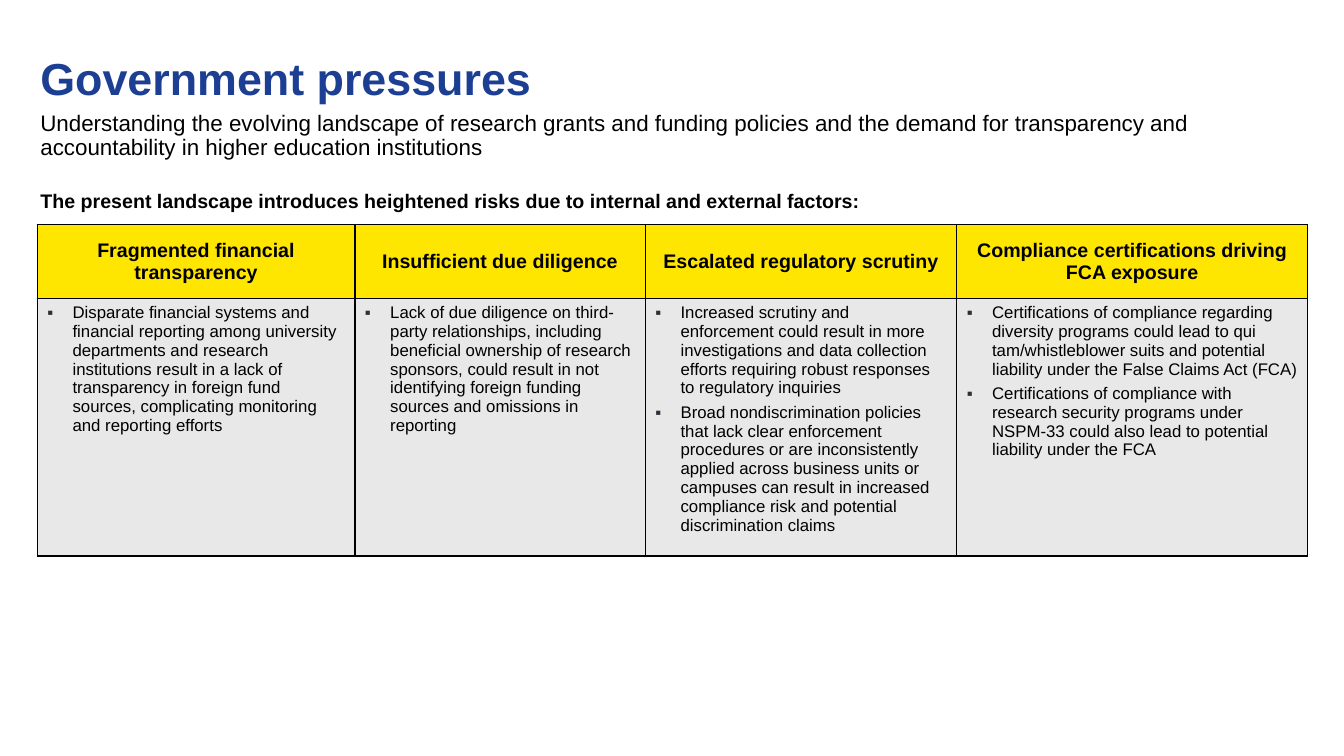
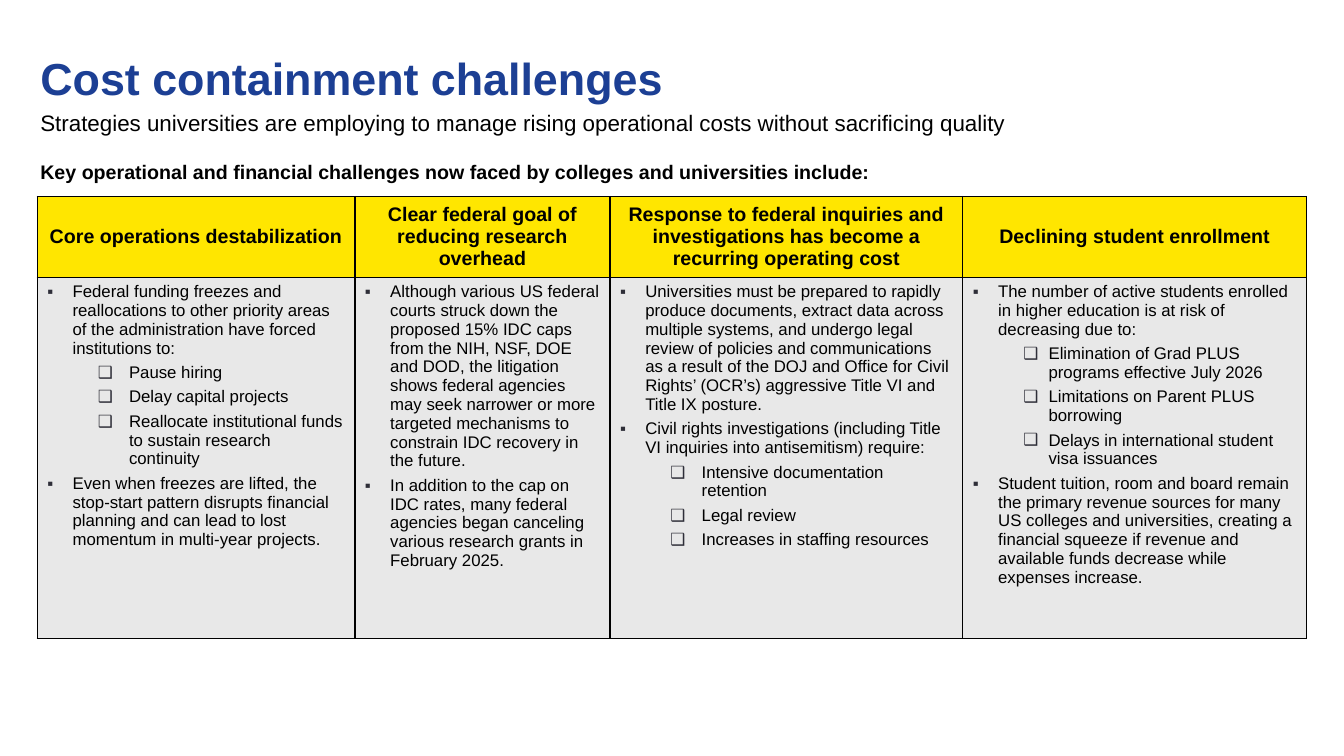
import dataclasses

import lxml.etree
import pptx
import pptx.dml.color
import pptx.enum.text
import pptx.oxml.ns
import pptx.util

Inches = pptx.util.Inches
Pt = pptx.util.Pt
RGBColor = pptx.dml.color.RGBColor
qn = pptx.oxml.ns.qn

NAVY = RGBColor(0x1C, 0x3F, 0x94)
BLACK = RGBColor(0x00, 0x00, 0x00)
YELLOW = RGBColor(0xFF, 0xE6, 0x00)
GREY = RGBColor(0xE8, 0xE8, 0xE8)
BULLET = RGBColor(0x2E, 0x2E, 0x38)
FONT = "Arial"

MARGIN = 0.4
TEXT_WIDTH = 12.21
TABLE_LEFT = 0.37
LEAD_TO_TABLE = 0.36
HANG = 0.25
SUB_OFFSET = 0.5


@dataclasses.dataclass
class Column:
    """A table column; a list among the points holds sub-points."""
    heading: str
    width: float
    points: list
    sub_hang: float = HANG


def set_font(paragraph, size, color=BLACK, bold=False):
    font = paragraph.font
    font.name = FONT
    font.size = Pt(size)
    font.bold = bold
    font.color.rgb = color


def add_line(slide, text, top, height, size, color=BLACK, bold=False,
             inset=0.05, spacing=None):
    box = slide.shapes.add_textbox(Inches(MARGIN), Inches(top),
                                   Inches(TEXT_WIDTH), Inches(height))
    frame = box.text_frame
    frame.word_wrap = True
    frame.margin_left = frame.margin_right = 0
    frame.margin_top = frame.margin_bottom = Inches(inset)
    paragraph = frame.paragraphs[0]
    paragraph.text = text
    paragraph.line_spacing = spacing
    set_font(paragraph, size, color, bold)


def style_cell(cell, fill):
    """Give the cell a thin black border and a solid fill."""
    properties = cell._tc.get_or_add_tcPr()
    for side in ("a:lnL", "a:lnR", "a:lnT", "a:lnB"):
        line = lxml.etree.SubElement(properties, qn(side), w=str(Pt(1)))
        solid = lxml.etree.SubElement(line, qn("a:solidFill"))
        lxml.etree.SubElement(solid, qn("a:srgbClr"), val=str(BLACK))
    cell.fill.solid()
    cell.fill.fore_color.rgb = fill


def set_bullet(paragraph, mark, indent, hang):
    properties = paragraph._p.get_or_add_pPr()
    properties.set("marL", str(Inches(indent)))
    properties.set("indent", str(-Inches(hang)))
    color = lxml.etree.SubElement(properties, qn("a:buClr"))
    lxml.etree.SubElement(color, qn("a:srgbClr"), val=str(BULLET))
    lxml.etree.SubElement(properties, qn("a:buFont"), typeface=FONT)
    lxml.etree.SubElement(properties, qn("a:buChar"), char=mark)


def flatten(points):
    """Yield each point with its level."""
    for point in points:
        if isinstance(point, list):
            for sub_point in point:
                yield sub_point, 1
        else:
            yield point, 0


def fill_heading(cell, heading):
    style_cell(cell, YELLOW)
    cell.vertical_anchor = pptx.enum.text.MSO_ANCHOR.MIDDLE
    paragraph = cell.text_frame.paragraphs[0]
    paragraph.text = heading
    paragraph.alignment = pptx.enum.text.PP_ALIGN.CENTER
    set_font(paragraph, 14, bold=True)


def fill_points(cell, column):
    style_cell(cell, GREY)
    frame = cell.text_frame
    for index, (point, level) in enumerate(flatten(column.points)):
        paragraph = frame.add_paragraph() if index else frame.paragraphs[0]
        paragraph.text = point
        paragraph.level = level
        if level:
            set_bullet(paragraph, "❑", SUB_OFFSET + column.sub_hang, column.sub_hang)
        else:
            set_bullet(paragraph, "▪", HANG, HANG)
        paragraph.space_after = Pt(4)
        set_font(paragraph, 12)


def add_factor_table(slide, columns, top, row_heights):
    width = sum(column.width for column in columns)
    table = slide.shapes.add_table(
        len(row_heights), len(columns), Inches(TABLE_LEFT), Inches(top),
        Inches(width), Inches(sum(row_heights))).table
    table.first_row = False
    table.horz_banding = False
    for row, height in zip(table.rows, row_heights):
        row.height = Inches(height)
    for index, column in enumerate(columns):
        table.columns[index].width = Inches(column.width)
        fill_heading(table.cell(0, index), column.heading)
        fill_points(table.cell(1, index), column)


def add_factor_slide(deck, title, subtitle, lead, lead_top, columns, row_heights):
    slide = deck.slides.add_slide(deck.slide_layouts[6])
    add_line(slide, title, 0.45, 0.6, 32, NAVY, bold=True)
    add_line(slide, subtitle, 1.06, 0.5, 16, spacing=0.9)
    add_line(slide, lead, lead_top, 0.24, 14, bold=True, inset=0)
    add_factor_table(slide, columns, lead_top + LEAD_TO_TABLE, row_heights)


PRESSURES = [
    Column("Fragmented financial transparency", 3.15, [
        "Disparate financial systems and financial reporting among university "
        "departments and research institutions result in a lack of transparency in "
        "foreign fund sources, complicating monitoring and reporting efforts",
    ]),
    Column("Insufficient due diligence", 2.88, [
        "Lack of due diligence on third-party relationships, including beneficial "
        "ownership of research sponsors, could result in not identifying foreign "
        "funding sources and omissions in reporting",
    ]),
    Column("Escalated regulatory scrutiny", 3.09, [
        "Increased scrutiny and enforcement could result in more investigations and "
        "data collection efforts requiring robust responses to regulatory inquiries",
        "Broad nondiscrimination policies that lack clear enforcement procedures or "
        "are inconsistently applied across business units or campuses can result in "
        "increased compliance risk and potential discrimination claims",
    ]),
    Column("Compliance certifications driving FCA exposure", 3.48, [
        "Certifications of compliance regarding diversity programs could lead to qui "
        "tam/whistleblower suits and potential liability under the False Claims Act "
        "(FCA)",
        "Certifications of compliance with research security programs under NSPM-33 "
        "could also lead to potential liability under the FCA",
    ]),
]

CHALLENGES = [
    Column("Core operations destabilization", 3.15, [
        "Federal funding freezes and reallocations to other priority areas of the "
        "administration have forced institutions to:",
        [
            "Pause hiring",
            "Delay capital projects",
            "Reallocate institutional funds to sustain research continuity",
        ],
        "Even when freezes are lifted, the stop‑start pattern disrupts financial "
        "planning and can lead to lost momentum in multi‑year projects.",
    ], sub_hang=0.31),
    Column("Clear federal goal of reducing research overhead", 2.53, [
        "Although various US federal courts struck down the proposed 15% IDC caps "
        "from the NIH, NSF, DOE and DOD, the litigation shows federal agencies may "
        "seek narrower or more targeted mechanisms to constrain IDC recovery in the "
        "future.",
        "In addition to the cap on IDC rates, many federal agencies began canceling "
        "various research grants in February 2025.",
    ]),
    Column("Response to federal inquiries and investigations has become a recurring "
           "operating cost", 3.5, [
        "Universities must be prepared to rapidly produce documents, extract data "
        "across multiple systems, and undergo legal review of policies and "
        "communications as a result of the DOJ and Office for Civil Rights’ (OCR’s) "
        "aggressive Title VI and Title IX posture.",
        "Civil rights investigations (including Title VI inquiries into "
        "antisemitism) require:",
        [
            "Intensive documentation retention",
            "Legal review",
            "Increases in staffing resources",
        ],
    ], sub_hang=0.31),
    Column("Declining student enrollment", 3.41, [
        "The number of active students enrolled in higher education is at risk of "
        "decreasing due to:",
        [
            "Elimination of Grad PLUS programs effective July 2026",
            "Limitations on Parent PLUS borrowing",
            "Delays in international student visa issuances",
        ],
        "Student tuition, room and board remain the primary revenue sources for many "
        "US colleges and universities, creating a financial squeeze if revenue and "
        "available funds decrease while expenses increase.",
    ]),
]


def main():
    deck = pptx.Presentation()
    deck.slide_width = Inches(13.33)
    deck.slide_height = Inches(7.5)
    add_factor_slide(
        deck, "Government pressures",
        "Understanding the evolving landscape of research grants and funding policies "
        "and the demand for transparency and accountability in higher education "
        "institutions",
        "The present landscape introduces heightened risks due to internal and "
        "external factors:",
        1.87, PRESSURES, (0.73, 2.55))
    add_factor_slide(
        deck, "Cost containment challenges",
        "Strategies universities are employing to manage rising operational costs "
        "without sacrificing quality",
        "Key operational and financial challenges now faced by colleges and "
        "universities include:",
        1.59, CHALLENGES, (0.8, 3.58))
    deck.save("out.pptx")


if __name__ == "__main__":
    main()
